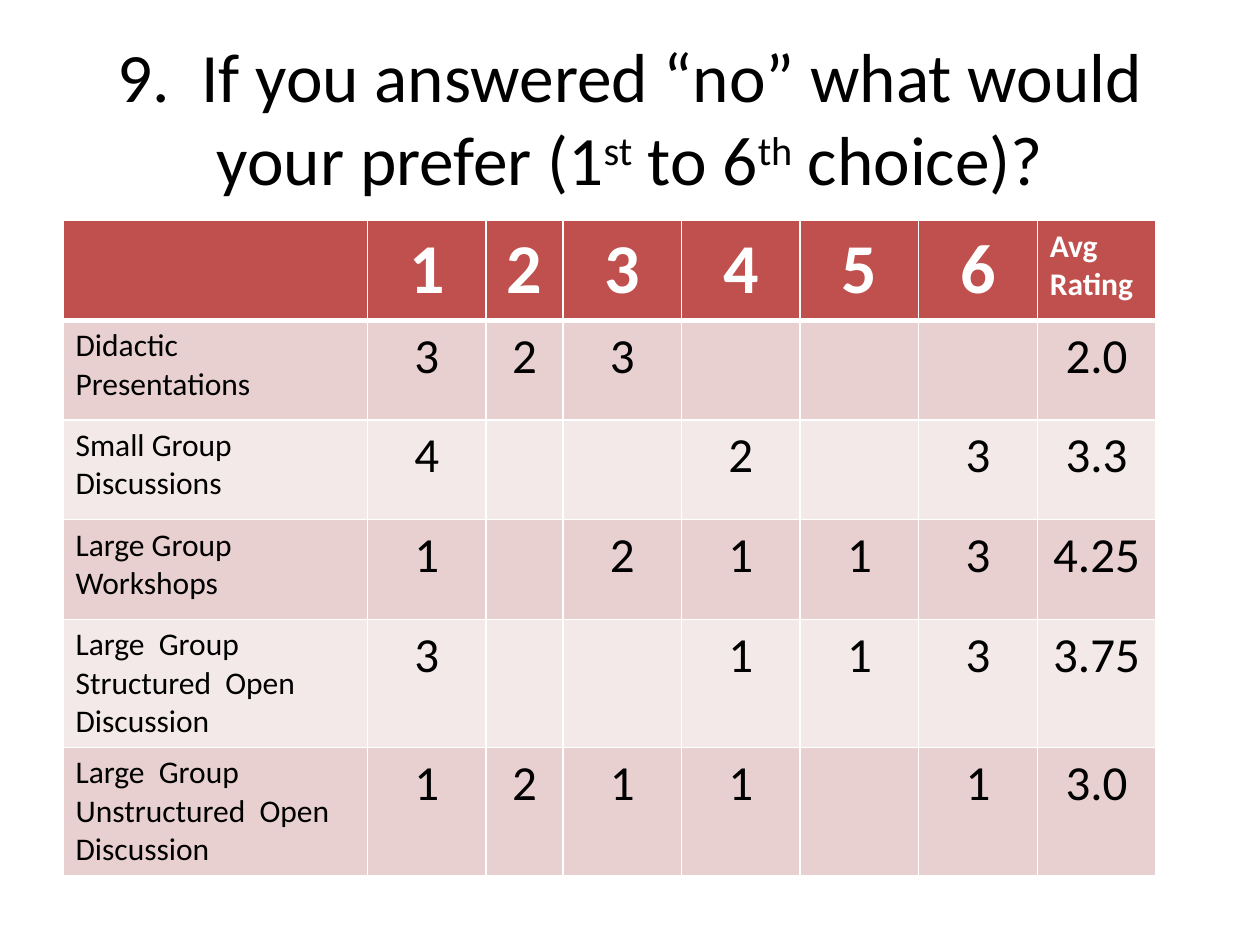
from lxml.etree import SubElement
from pptx import Presentation
from pptx.dml.color import RGBColor
from pptx.enum.text import MSO_ANCHOR, MSO_AUTO_SIZE, PP_ALIGN
from pptx.oxml.ns import qn
from pptx.util import Cm, Pt

FONT = "Calibri"
BLACK = RGBColor(0x00, 0x00, 0x00)
WHITE = RGBColor(0xFF, 0xFF, 0xFF)
RED = RGBColor(0xC0, 0x50, 0x4D)
ROSE = RGBColor(0xE8, 0xD0, 0xD0)
PALE_ROSE = RGBColor(0xF4, 0xE9, 0xE9)

TITLE_PARTS = [
    ("9.  If you answered “no” what would your prefer (1", False),
    ("st", True),
    (" to 6", False),
    ("th", True),
    (" choice)?", False),
]
HEADER = ["", "1", "2", "3", "4", "5", "6", "Avg\nRating"]
RATINGS = [
    ["Didactic\nPresentations", "3", "2", "3", "", "", "", "2.0"],
    ["Small Group\nDiscussions", "4", "", "", "2", "", "3", "3.3"],
    ["Large Group\nWorkshops", "1", "", "2", "1", "1", "3", "4.25"],
    ["Large  Group Structured  Open\nDiscussion", "3", "", "", "1", "1", "3", "3.75"],
    ["Large  Group\nUnstructured  Open\nDiscussion", "1", "2", "1", "1", "", "1", "3.0"],
]
COLUMN_WIDTHS = [6.14, 2.39, 1.55] + [2.39] * 5
ROW_HEIGHT = 2.01


def format_font(font, size, color, bold=False):
    font.name = FONT
    font.size = Pt(size)
    font.bold = bold
    font.color.rgb = color


def fill_title(title):
    title.left, title.top = Cm(1.27), Cm(0.76)
    title.width, title.height = Cm(22.86), Cm(3.18)
    frame = title.text_frame
    frame.word_wrap = True
    frame.auto_size = MSO_AUTO_SIZE.NONE
    frame.vertical_anchor = MSO_ANCHOR.MIDDLE
    para = frame.paragraphs[0]
    para.alignment = PP_ALIGN.CENTER
    for text, raised in TITLE_PARTS:
        span = para.add_run()
        span.text = text
        format_font(span.font, 39.6, BLACK)
        if raised:
            span._r.get_or_add_rPr().set("baseline", "30000")


def add_borders(cell, widths):
    """Draw white borders; widths maps a side (L, R, T, B) to points."""
    properties = cell._tc.get_or_add_tcPr()
    for side, width in widths.items():
        line = SubElement(properties, qn(f"a:ln{side}"), w=str(Pt(width)))
        fill = SubElement(line, qn("a:solidFill"))
        SubElement(fill, qn("a:srgbClr"), val=str(WHITE))


def fill_cell(cell, text, background, size, color, bold, centred):
    cell.fill.solid()
    cell.fill.fore_color.rgb = background
    cell.text_frame.text = text
    for para in cell.text_frame.paragraphs:
        if centred:
            para.alignment = PP_ALIGN.CENTER
        format_font(para.font, size, color, bold)
        for span in para.runs:
            format_font(span.font, size, color, bold)


def add_rating_table(page):
    rows = [HEADER] + RATINGS
    table = page.shapes.add_table(
        len(rows), len(HEADER), Cm(1.27), Cm(4.45),
        Cm(sum(COLUMN_WIDTHS)), Cm(ROW_HEIGHT * len(rows)),
    ).table
    for column, width in zip(table.columns, COLUMN_WIDTHS):
        column.width = Cm(width)
    for r, texts in enumerate(rows):
        table.rows[r].height = Cm(ROW_HEIGHT)
        is_header = r == 0
        background = RED if is_header else (ROSE if r % 2 else PALE_ROSE)
        color = WHITE if is_header else BLACK
        for c, text in enumerate(texts):
            is_label = "\n" in text
            if is_label or not text:
                size = 18
            else:
                size = 40 if is_header else 28
            cell = table.cell(r, c)
            add_borders(cell, {"L": 1, "R": 1, "T": 3 if r == 1 else 1,
                               "B": 3 if is_header else 1})
            fill_cell(cell, text, background, size, color, is_header, not is_label)


def main():
    deck = Presentation()
    deck.slide_width, deck.slide_height = Cm(25.4), Cm(19.05)
    page = deck.slides.add_slide(deck.slide_layouts[5])
    fill_title(page.shapes.title)
    add_rating_table(page)
    deck.save("out.pptx")


if __name__ == "__main__":
    main()
